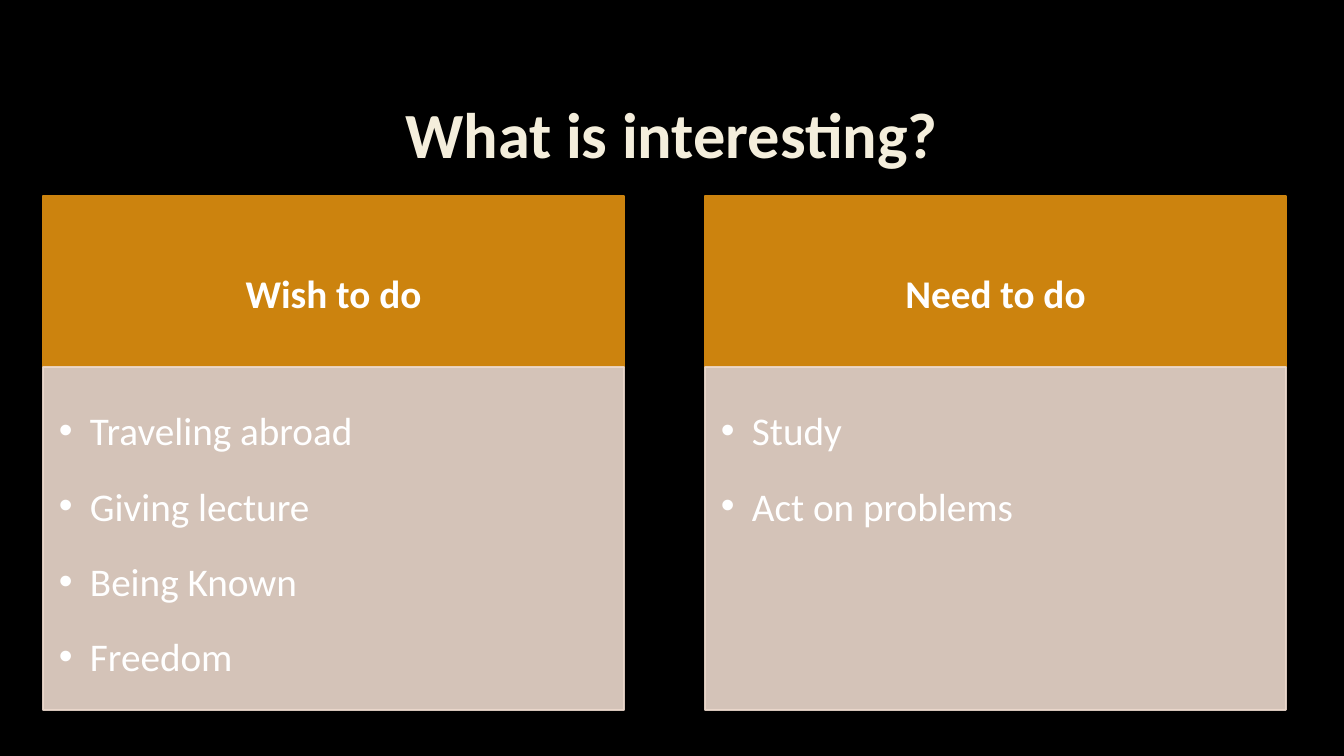
from lxml import etree
from pptx import Presentation
from pptx import util as u
from pptx.dml.color import RGBColor
from pptx.enum import shapes, text
from pptx.oxml.ns import qn

# Content
TITLE = "What is interesting?"
COLUMNS = [
    ("Wish to do", ["Traveling abroad", "Giving lecture", "Being Known", "Freedom"]),
    ("Need to do", ["Study", "Act on problems"]),
]

# Style
COLORS = {"page": "000000", "title": "F4EEDC", "outline": "404040",
          "head": "CC830E", "body": "ECD9CC", "text": "FFFFFF"}
FONT = "Calibri"

# Layout in px
SCALE = 914400 / 100.8
PAGE_W, PAGE_H = 1344, 756
TITLE_BOX = (101, 68, 1141, 207)
LEFT, TOP, COLUMN_W, COLUMN_STEP = 43, 196, 581, 662
HEAD_H, BODY_H = 171, 343
HEAD_INSETS = (22, 12, 22, 12)
BODY_INSETS = (16, 16, 22, 24)
BULLET_INDENT = 31


def px(length):
    return u.Emu(round(length * SCALE))


def color(name):
    return RGBColor.from_string(COLORS[name])


def set_alpha(fill_owner, percent):
    """Make every RGB colour below an element partly transparent."""
    for rgb in fill_owner.iter(qn("a:srgbClr")):
        etree.SubElement(rgb, qn("a:alpha")).set("val", str(percent * 1000))


def write(box, lines, size, ink, insets, anchor, align, spacing, after=0, bold=False):
    frame = box.text_frame
    frame.word_wrap = True
    frame.vertical_anchor = anchor
    (frame.margin_left, frame.margin_top,
     frame.margin_right, frame.margin_bottom) = map(px, insets)
    frame.text = "\n".join(lines)
    for para in frame.paragraphs:
        para.alignment = align
        para.line_spacing = spacing
        para.space_after = u.Pt(after)
        for span in para.runs:
            span.font.name = FONT
            span.font.size = u.Pt(size)
            span.font.bold = bold
            span.font.color.rgb = color(ink)
    return frame


def add_panel(page, place, fill):
    panel = page.shapes.add_shape(shapes.MSO_SHAPE.RECTANGLE, *map(px, place))
    panel.shadow.inherit = False
    panel.fill.solid()
    panel.fill.fore_color.rgb = color(fill)
    panel.line.color.rgb = color(fill)
    panel.line.width = u.Pt(1.25)
    return panel


def add_bullets(frame):
    for para in frame.paragraphs:
        props = para._p.get_or_add_pPr()
        props.set("marL", str(px(BULLET_INDENT)))
        props.set("indent", str(-px(BULLET_INDENT)))
        etree.SubElement(props, qn("a:buFont")).set("typeface", "Arial")
        etree.SubElement(props, qn("a:buChar")).set("char", "•")


def add_title(page):
    box = page.shapes.add_textbox(*map(px, (TITLE_BOX[0], TITLE_BOX[1],
                                            TITLE_BOX[2], TITLE_BOX[3] - TITLE_BOX[1])))
    frame = write(box, [TITLE], 46, "title", (10, 5, 10, 5),
                  text.MSO_ANCHOR.MIDDLE, text.PP_ALIGN.CENTER, 0.9, bold=True)
    # Faint letter outline
    props = frame.paragraphs[0].runs[0].font._element
    line = etree.Element(qn("a:ln"), w=str(u.Pt(0.75)))
    fill = etree.SubElement(line, qn("a:solidFill"))
    etree.SubElement(fill, qn("a:srgbClr")).set("val", COLORS["outline"])
    set_alpha(line, 10)
    props.insert(0, line)


def add_column(page, left, heading, items):
    head = add_panel(page, (left, TOP, COLUMN_W, HEAD_H), "head")
    write(head, [heading], 28, "text", HEAD_INSETS, text.MSO_ANCHOR.MIDDLE,
          text.PP_ALIGN.CENTER, 1.5, after=10, bold=True)
    body = add_panel(page, (left, TOP + HEAD_H, COLUMN_W, BODY_H), "body")
    set_alpha(body._element.spPr, 90)
    frame = write(body, items, 28, "text", BODY_INSETS, text.MSO_ANCHOR.TOP,
                  text.PP_ALIGN.LEFT, 1.5, after=3.4)
    add_bullets(frame)


def main():
    deck = Presentation()
    deck.slide_width, deck.slide_height = px(PAGE_W), px(PAGE_H)
    page = deck.slides.add_slide(deck.slide_layouts[6])
    page.background.fill.solid()
    page.background.fill.fore_color.rgb = color("page")

    add_title(page)
    for index, (heading, items) in enumerate(COLUMNS):
        add_column(page, LEFT + index * COLUMN_STEP, heading, items)

    deck.save("out.pptx")


if __name__ == "__main__":
    main()
